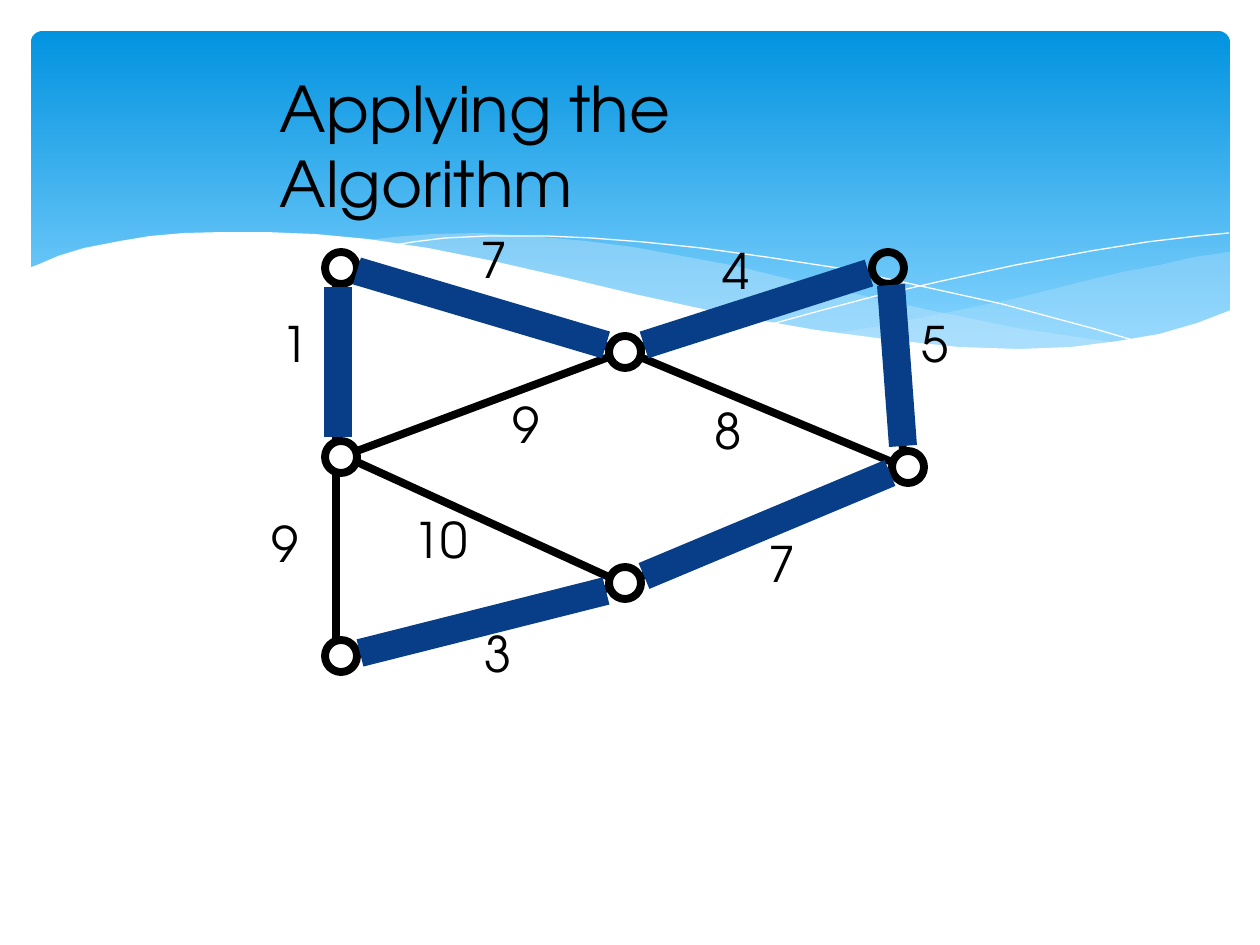
from lxml.etree import SubElement
from pptx import Presentation
from pptx.dml.color import RGBColor
from pptx.enum.shapes import MSO_CONNECTOR, MSO_SHAPE
from pptx.enum.text import MSO_ANCHOR, MSO_AUTO_SIZE, PP_ALIGN
from pptx.oxml.ns import qn
from pptx.util import Pt

SCALE = 914400 / 126
FONT = "TeX Gyre Adventor"
COLORS = {
    "ink": "000000",
    "tree": "073E87",
    "white": "FFFFFF",
    "wave": "C6E7FC",
    "sky_top": "0293E0",
    "sky_bottom": "83D3FE",
}

RIGHT_WAVE = [
    (1229, 252), (1194, 257), (1160, 265), (1123, 272), (1085, 281), (1014, 299),
    (949, 312), (890, 324), (833, 334), (871, 339), (906, 343), (939, 347),
    (984, 349), (1026, 350), (1063, 349), (1110, 344), (1150, 336), (1187, 326),
    (1230, 311), (1230, 252),
]
MIDDLE_WAVE = [
    (1125, 344), (1091, 339), (1017, 328), (934, 311), (842, 291), (793, 280),
    (736, 266), (682, 256), (633, 247), (586, 241), (529, 236), (479, 233),
    (433, 234), (394, 237), (360, 241), (407, 247), (456, 256), (509, 266),
    (566, 280), (619, 292), (668, 302), (736, 318), (799, 329), (857, 338),
    (910, 345), (959, 349), (1003, 350), (1056, 350), (1092, 348),
]
FALLING_CURVE = [
    (389, 246), (413, 242), (445, 238), (488, 236), (546, 236), (591, 238),
    (643, 242), (701, 248), (766, 257), (838, 268), (916, 285), (1002, 304),
    (1095, 329), (1143, 343),
]
RISING_CURVE = [
    (772, 324), (823, 310), (876, 296), (942, 281), (1016, 265), (1091, 251),
    (1147, 242), (1198, 236), (1229, 233),
]
WHITE_WAVE = [
    (1231, 310), (1197, 323), (1159, 334), (1118, 341), (1071, 347), (1019, 349),
    (959, 347), (892, 340), (816, 330), (730, 315), (634, 294), (563, 277),
    (493, 261), (428, 248), (368, 239), (315, 234), (266, 232), (223, 232),
    (184, 233), (150, 236), (120, 241), (84, 248), (58, 256), (37, 265),
    (29, 268), (29, 415), (1231, 415),
]
NODES = [
    (325, 441), (325, 252), (609, 336), (872, 252), (892, 451), (609, 567), (325, 640),
]
EDGES = [
    (357, 273, 609, 347), (357, 451, 609, 357), (640, 347, 872, 273),
    (336, 441, 336, 284), (892, 462, 640, 357), (903, 451, 892, 284),
    (357, 462, 609, 577), (640, 577, 892, 473), (336, 640, 336, 473),
    (357, 651, 609, 588),
]
TREE_EDGES = [
    (360, 653, 606, 591), (338, 437, 338, 287), (606, 345, 357, 271),
    (869, 273, 644, 345), (903, 446, 891, 285), (644, 576, 890, 473),
]
WEIGHTS = [
    ("1", 268, 307, 54), ("8", 701, 394, 54), ("7", 755, 527, 54),
    ("9", 499, 388, 54), ("10", 399, 503, 83), ("3", 471, 617, 54),
    ("5", 908, 307, 54), ("4", 709, 234, 54), ("7", 467, 223, 54),
    ("9", 258, 507, 54),
]


def px(*lengths):
    return [round(length * SCALE) for length in lengths]


def rgb(name):
    return RGBColor.from_string(COLORS[name])


class GraphSlide:
    """Draws the parts of a weighted graph on one slide."""

    def __init__(self, slide):
        self.slide = slide
        self.shapes = slide.shapes

    def sky(self, left, top, width, height):
        panel = self.shapes.add_shape(
            MSO_SHAPE.ROUNDED_RECTANGLE, *px(left, top, width, height))
        panel.adjustments[0] = 0.034
        panel.shadow.inherit = False
        panel.line.fill.background()
        panel.fill.gradient()
        panel.fill.gradient_angle = 270
        stops = zip(panel.fill.gradient_stops, ("sky_top", "sky_bottom"), (0, 0.9))
        for stop, color, position in stops:
            stop.color.rgb = rgb(color)
            stop.position = position

    def outline(self, points, closed):
        builder = self.shapes.build_freeform(*points[0], scale=SCALE)
        builder.add_line_segments(points[1:], close=closed)
        outline = builder.convert_to_shape()
        outline.shadow.inherit = False
        return outline

    def wave(self, points, color, opacity=100):
        wave = self.outline(points, True)
        wave.fill.solid()
        wave.fill.fore_color.rgb = rgb(color)
        if opacity < 100:
            tint = wave._element.spPr.find(".//" + qn("a:srgbClr"))
            SubElement(tint, qn("a:alpha")).set("val", str(opacity * 1000))
        wave.line.fill.background()

    def curve(self, points):
        curve = self.outline(points, False)
        curve.fill.background()
        curve.line.color.rgb = rgb("white")
        curve.line.width = Pt(0)

    def node(self, left, top):
        node = self.shapes.add_shape(MSO_SHAPE.OVAL, *px(left, top, 32, 32))
        node.shadow.inherit = False
        node.fill.background()
        node.line.color.rgb = rgb("ink")
        node.line.width = Pt(4.5)

    def edge(self, ends, color, width):
        edge = self.shapes.add_connector(MSO_CONNECTOR.STRAIGHT, *px(*ends))
        edge.line.color.rgb = rgb(color)
        edge.line.width = Pt(width)
        SubElement(edge._element.spPr, qn("a:effectLst"))

    def add_text(self, frame, text, size, alignment):
        paragraph = frame.paragraphs[0]
        paragraph.alignment = alignment
        run = paragraph.add_run()
        run.text = text
        run.font.name = FONT
        run.font.size = Pt(size)
        run.font.color.rgb = rgb("ink")

    def weight(self, text, left, top, width):
        frame = self.shapes.add_textbox(*px(left, top, width, 72)).text_frame
        frame.word_wrap = False
        frame.auto_size = MSO_AUTO_SIZE.SHAPE_TO_FIT_TEXT
        self.add_text(frame, text, 28, PP_ALIGN.CENTER)

    def title(self, text, left, top, width, height):
        title = self.shapes.title
        title.left, title.top, title.width, title.height = px(left, top, width, height)
        frame = title.text_frame
        frame.word_wrap = True
        frame.auto_size = MSO_AUTO_SIZE.NONE
        frame.vertical_anchor = MSO_ANCHOR.TOP
        frame.margin_right = px(40)[0]
        self.add_text(frame, text, 36, PP_ALIGN.LEFT)
        self.shapes._spTree.append(title._element)


def main():
    deck = Presentation()
    deck.slide_width, deck.slide_height = px(1260, 945)
    graph = GraphSlide(deck.slides.add_slide(deck.slide_layouts[5]))

    graph.sky(31, 31, 1199, 340)
    graph.wave(RIGHT_WAVE, "wave", 29)
    graph.wave(MIDDLE_WAVE, "wave", 40)
    graph.curve(FALLING_CURVE)
    graph.curve(RISING_CURVE)
    graph.wave(WHITE_WAVE, "white")

    for corner in NODES:
        graph.node(*corner)
    for ends in EDGES:
        graph.edge(ends, "ink", 4.5)
    for weight in WEIGHTS:
        graph.weight(*weight)
    graph.title("Applying the Algorithm", 267, 63, 725, 88)
    for ends in TREE_EDGES:
        graph.edge(ends, "tree", 16)

    deck.save("out.pptx")


if __name__ == "__main__":
    main()
